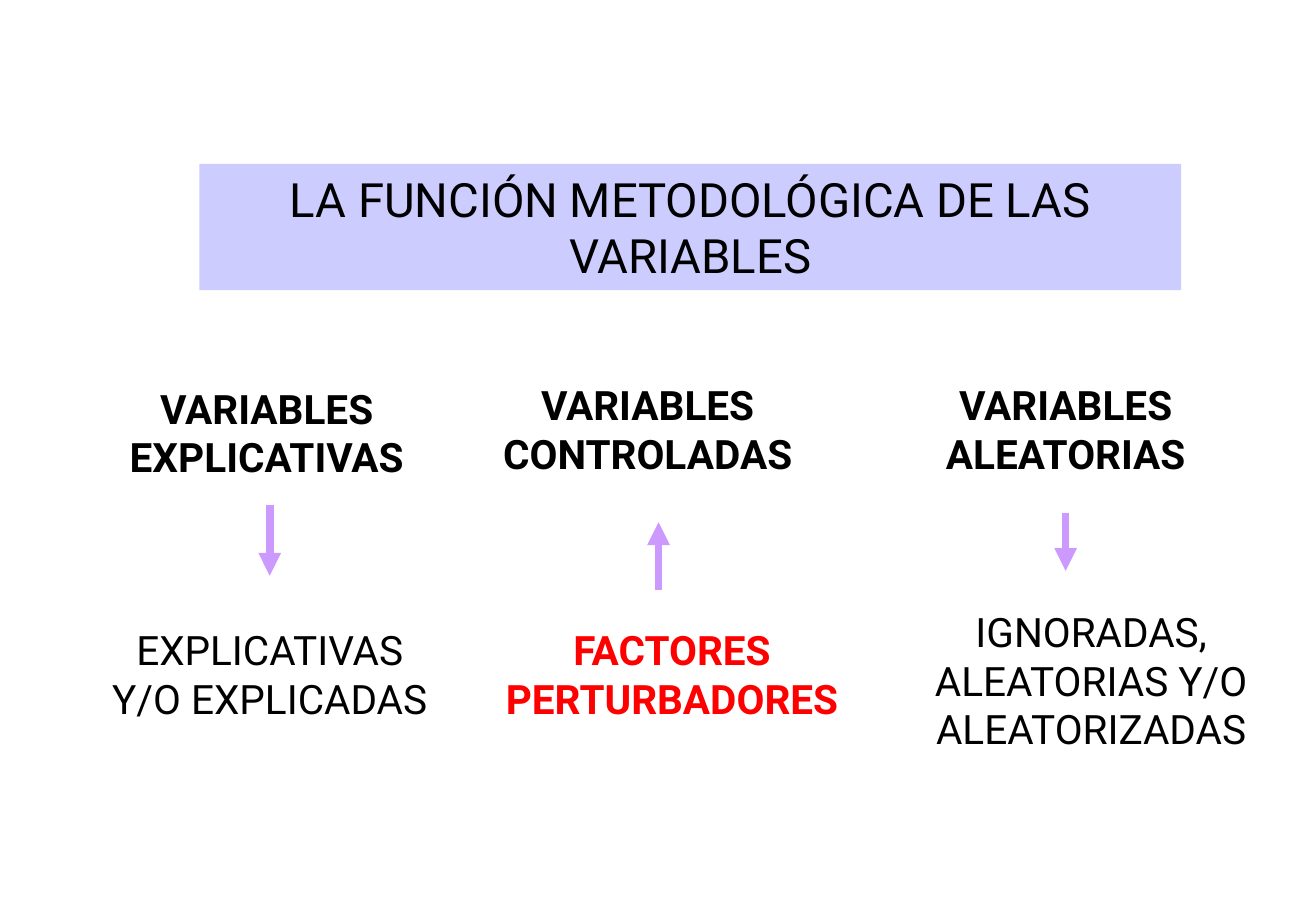
import dataclasses

import pptx
import pptx.dml.color
import pptx.enum.shapes
import pptx.enum.text
import pptx.oxml
import pptx.oxml.ns
import pptx.util

Inches = pptx.util.Inches
Pt = pptx.util.Pt


@dataclasses.dataclass(frozen=True)
class Theme:
    font: str = "Roboto"
    text: str = "000000"
    alert: str = "FF0000"
    banner: str = "CCCCFF"
    arrow: str = "CC99FF"
    title_size: float = 28
    body_size: float = 24
    arrow_width: float = 4.5


THEME = Theme()


def rgb(value):
    return pptx.dml.color.RGBColor.from_string(value)


def add_text(slide, box, text, size=THEME.body_size, color=THEME.text, bold=False, fill=None):
    left, top, width, height = map(Inches, box)
    if fill:
        label = slide.shapes.add_shape(
            pptx.enum.shapes.MSO_SHAPE.RECTANGLE, left, top, width, height)
        label.shadow.inherit = False
        label.fill.solid()
        label.fill.fore_color.rgb = rgb(fill)
        label.line.fill.background()
    else:
        label = slide.shapes.add_textbox(left, top, width, height)
    frame = label.text_frame
    frame.word_wrap = True
    frame.auto_size = pptx.enum.text.MSO_AUTO_SIZE.SHAPE_TO_FIT_TEXT
    frame.vertical_anchor = pptx.enum.text.MSO_ANCHOR.TOP
    paragraph = frame.paragraphs[0]
    paragraph.alignment = pptx.enum.text.PP_ALIGN.CENTER
    run = paragraph.add_run()
    run.text = text
    run.font.name = THEME.font
    run.font.size = Pt(size)
    run.font.bold = bold
    run.font.color.rgb = rgb(color)


def add_arrow(slide, x, start, end):
    arrow = slide.shapes.add_connector(
        pptx.enum.shapes.MSO_CONNECTOR.STRAIGHT,
        Inches(x), Inches(start), Inches(x), Inches(end))
    arrow.line.color.rgb = rgb(THEME.arrow)
    arrow.line.width = Pt(THEME.arrow_width)
    namespace = pptx.oxml.ns.nsdecls("a")
    arrow.line._get_or_add_ln().append(
        pptx.oxml.parse_xml(f'<a:tailEnd {namespace} type="triangle"/>'))
    arrow._element.spPr.append(pptx.oxml.parse_xml(f"<a:effectLst {namespace}/>"))


def add_banner(slide, box):
    add_text(slide, box, "LA FUNCIÓN METODOLÓGICA DE LAS VARIABLES",
             size=THEME.title_size, fill=THEME.banner)


def add_variable_column(slide, box, heading, role, role_box, arrow, **role_format):
    left, top, width, height = box
    role_dx, role_dy, role_width, role_height = role_box
    arrow_dx, arrow_start, arrow_end = arrow
    add_text(slide, box, heading, bold=True)
    add_arrow(slide, left + arrow_dx, top + arrow_start, top + arrow_end)
    add_text(slide, (left + role_dx, top + role_dy, role_width, role_height),
             role, **role_format)


def main():
    deck = pptx.Presentation()
    deck.slide_width = Inches(10.83)
    deck.slide_height = Inches(7.5)
    slide = deck.slides.add_slide(deck.slide_layouts[6])
    add_banner(slide, (1.64, 1.35, 8.08, 1.04))
    add_variable_column(
        slide, (0.61, 3.11, 3.17, 0.91), "VARIABLES EXPLICATIVAS",
        "EXPLICATIVAS Y/O EXPLICADAS", (0.18, 1.99, 2.86, 0.91), (1.61, 1.05, 1.63))
    add_variable_column(
        slide, (3.9, 3.08, 2.86, 0.91), "VARIABLES CONTROLADAS",
        "FACTORES PERTURBADORES", (0.01, 2.02, 3.24, 0.91), (1.52, 1.78, 1.22),
        color=THEME.alert, bold=True)
    add_variable_column(
        slide, (7.34, 3.08, 2.86, 0.91), "VARIABLES ALEATORIAS",
        "IGNORADAS, ALEATORIAS Y/O ALEATORIZADAS", (0.21, 1.87, 2.86, 1.31),
        (1.43, 1.14, 1.62))
    deck.save("out.pptx")


if __name__ == "__main__":
    main()
